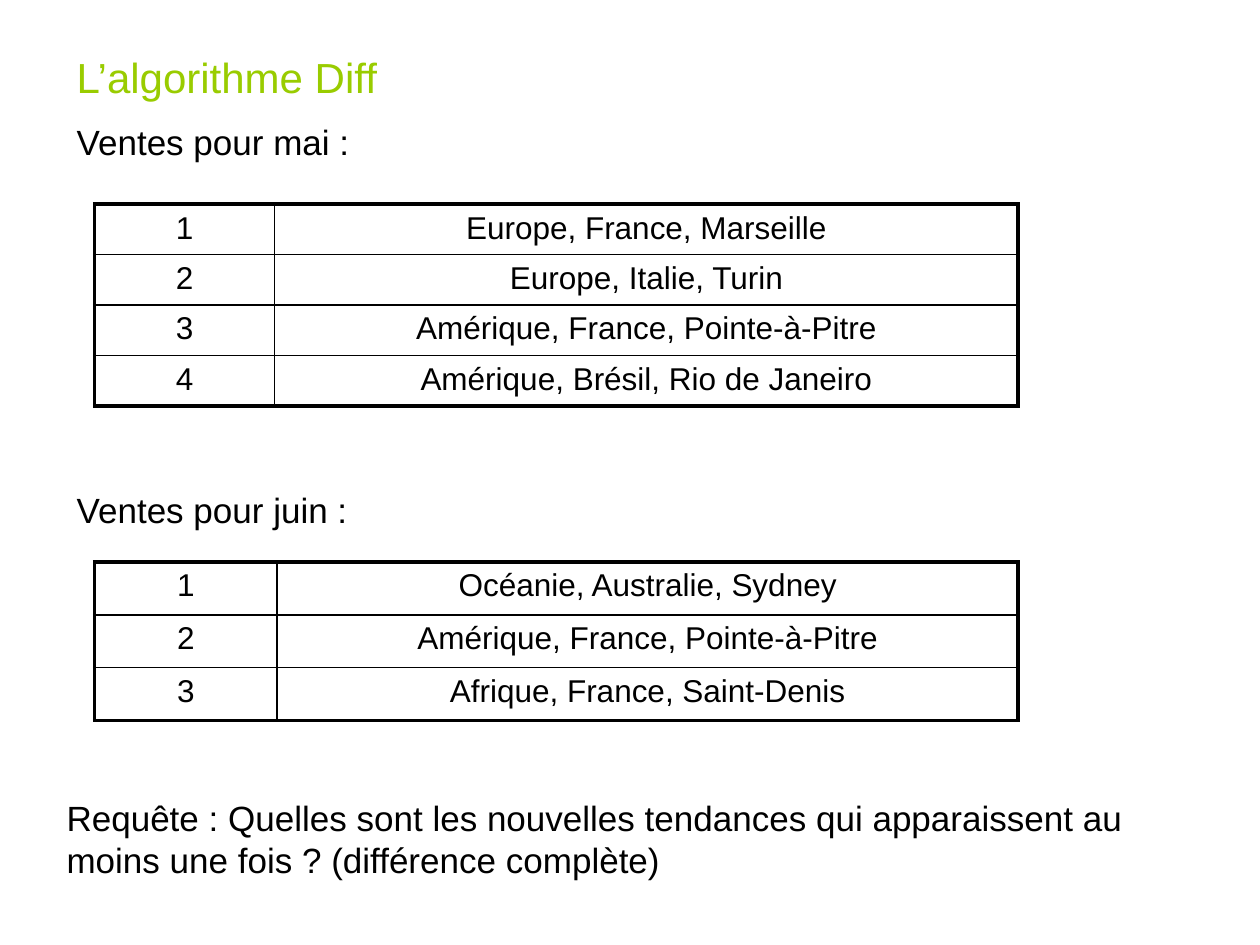
from typing import NamedTuple

from lxml import etree
from pptx import Presentation
from pptx.dml.color import RGBColor
from pptx.enum.text import PP_ALIGN
from pptx.oxml.ns import qn
from pptx.util import Emu, Pt

EMU_PER_PX = 9144  # 100 px to the inch
CENTER = PP_ALIGN.CENTER
FONT = "Arial"
BLACK, GREEN = "000000", "99CC00"
THIN, THICK = 1, 2.25


class Label(NamedTuple):
    text: str
    left: int
    top: int
    width: int
    height: int
    size: int = 20
    color: str = BLACK


class SalesTable(NamedTuple):
    top: int
    number_width: int
    row_height: int
    places: tuple[str, ...]


LABELS = (
    Label("L’algorithme Diff", 51, 36, 442, 50, 24, GREEN),
    Label("Ventes pour mai :", 51, 91, 535, 43),
    Label("Ventes pour juin :", 51, 383, 535, 43),
    Label("Requête : Quelles sont les nouvelles tendances qui apparaissent "
          "au moins une fois ? (différence complète)", 43, 627, 890, 77),
)
TABLE_LEFT, TABLE_WIDTH = 75, 733
MAY = SalesTable(162, 143, 40, (
    "Europe, France, Marseille",
    "Europe, Italie, Turin",
    "Amérique, France, Pointe-à-Pitre",
    "Amérique, Brésil, Rio de Janeiro",
))
JUNE = SalesTable(446, 145, 42, (
    "Océanie, Australie, Sydney",
    "Amérique, France, Pointe-à-Pitre",
    "Afrique, France, Saint-Denis",
))


def px(length: int) -> Emu:
    return Emu(length * EMU_PER_PX)


def rgb(color: str) -> RGBColor:
    return RGBColor.from_string(color)


def write(frame, text: str, size: int, color: str) -> None:
    paragraph = frame.paragraphs[0]
    paragraph.text = text
    paragraph.font.name = FONT
    paragraph.font.size = Pt(size)
    paragraph.font.color.rgb = rgb(color)


def add_label(slide, label: Label) -> None:
    box = slide.shapes.add_textbox(px(label.left), px(label.top),
                                   px(label.width), px(label.height))
    box.text_frame.word_wrap = True
    write(box.text_frame, label.text, label.size, label.color)


def set_borders(cell, widths: dict[str, float]) -> None:
    properties = cell._tc.get_or_add_tcPr()
    for position, (side, width) in enumerate(widths.items()):
        line = etree.Element(qn(f"a:{side}"), w=str(Pt(width)))
        fill = etree.SubElement(line, qn("a:solidFill"))
        etree.SubElement(fill, qn("a:srgbClr"), val=BLACK)
        properties.insert(position, line)


def add_sales_table(slide, sales: SalesTable) -> None:
    count = len(sales.places)
    table = slide.shapes.add_table(
        count, 2, px(TABLE_LEFT), px(sales.top),
        px(TABLE_WIDTH), px(sales.row_height * count)).table
    table.first_row = table.horz_banding = False
    table.columns[0].width = px(sales.number_width)
    table.columns[1].width = px(TABLE_WIDTH - sales.number_width)

    for row, place in enumerate(sales.places):
        table.rows[row].height = px(sales.row_height)
        for column, text in enumerate((str(row + 1), place)):
            cell = table.cell(row, column)
            cell.fill.background()
            write(cell.text_frame, text, 18, BLACK)
            cell.text_frame.paragraphs[0].alignment = CENTER
            # Thick outer frame, thin inner grid
            set_borders(cell, {
                "lnL": THICK if column == 0 else THIN,
                "lnR": THICK if column == 1 else THIN,
                "lnT": THICK if row == 0 else THIN,
                "lnB": THICK if row == count - 1 else THIN,
            })


def main() -> None:
    presentation = Presentation()
    presentation.slide_width, presentation.slide_height = px(1000), px(750)
    slide = presentation.slides.add_slide(presentation.slide_layouts[6])

    # Title, table headings and query
    for label in LABELS:
        add_label(slide, label)

    # Sales by month
    for sales in (MAY, JUNE):
        add_sales_table(slide, sales)

    presentation.save("out.pptx")


if __name__ == "__main__":
    main()
